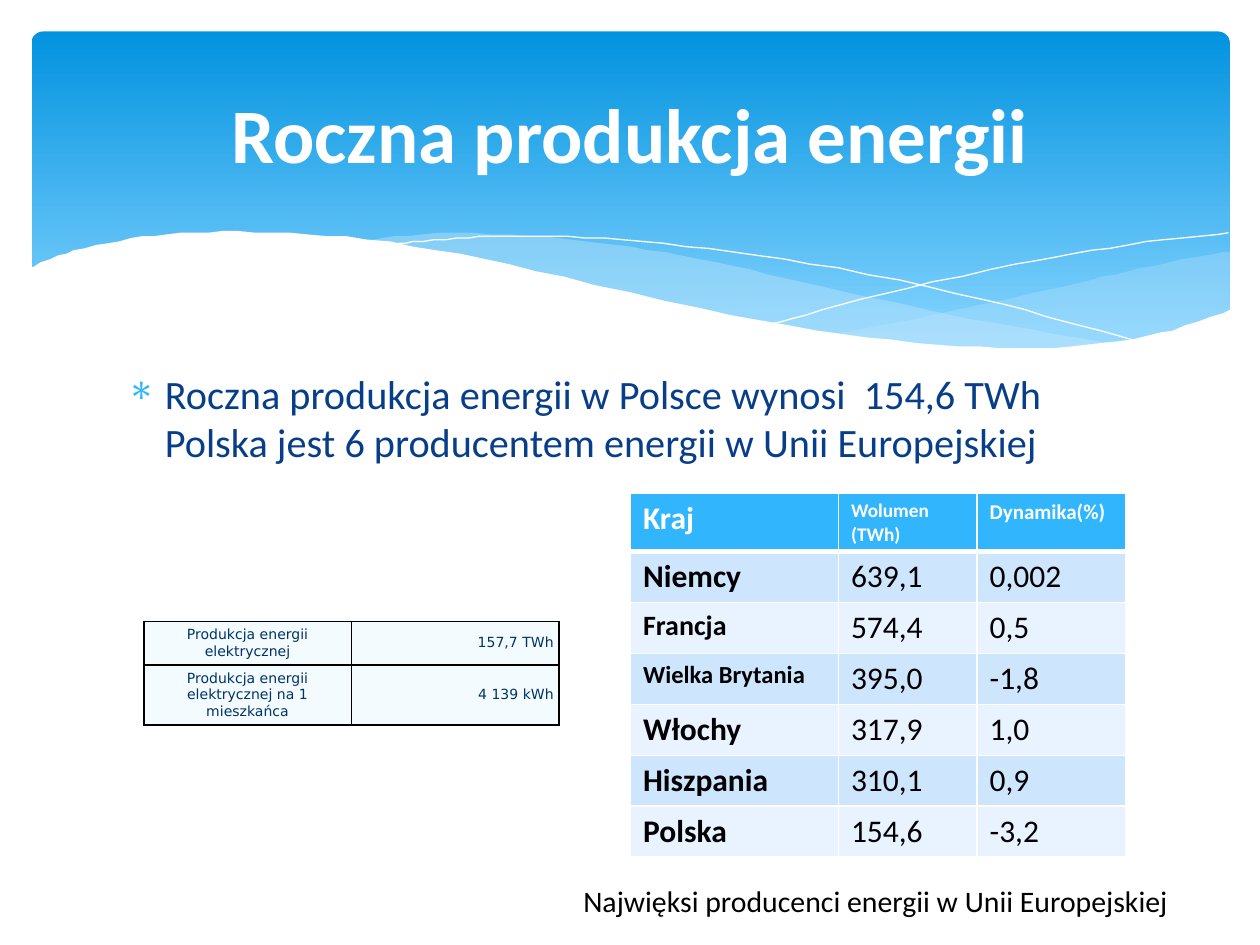
from lxml import etree
from pptx import Presentation
from pptx.dml.color import RGBColor
from pptx.enum import shapes, text
from pptx.oxml import ns
from pptx.util import Pt

WHITE = RGBColor(0xFF, 0xFF, 0xFF)
BLACK = RGBColor(0, 0, 0)
SKY_TOP = RGBColor(0x02, 0x93, 0xE0)
SKY_BOTTOM = RGBColor(0x83, 0xD3, 0xFE)
MIST = RGBColor(0xC6, 0xE7, 0xFC)
NAVY = RGBColor(0x07, 0x3E, 0x87)
ACCENT = RGBColor(0x31, 0xB6, 0xFD)
BANDS = [RGBColor(0xCE, 0xE5, 0xFE), RGBColor(0xE8, 0xF3, 0xFF)]
ICE = RGBColor(0xF3, 0xFB, 0xFE)
INK = RGBColor(0x00, 0x33, 0x66)

TITLE = "Roczna produkcja energii"
SUMMARY = ("Roczna produkcja energii w Polsce wynosi  154,6 TWh\v"
           "Polska jest 6 producentem energii w Unii Europejskiej")
CAPTION = "Najwięksi producenci energii w Unii Europejskiej"
POLAND = [("Produkcja energii elektrycznej", "157,7 TWh"),
          ("Produkcja energii elektrycznej na 1 mieszkańca", "4 139 kWh")]
HEADINGS = [("Kraj", 18), ("Wolumen (TWh)", 11), ("Dynamika(%)", 12)]
PRODUCERS = [("Niemcy", 18, "639,1", "0,002"), ("Francja", 16, "574,4", "0,5"),
             ("Wielka Brytania", 14, "395,0", "-1,8"), ("Włochy", 18, "317,9", "1,0"),
             ("Hiszpania", 18, "310,1", "0,9"), ("Polska", 18, "154,6", "-3,2")]

RIGHT_WAVE = [
    [(702.7, 144), (682.6, 146.9), (652.3, 153.4), (619.9, 160.6), (560.9, 174.2),
     (508.3, 185), (475.9, 190.8)],
    [(475.9, 190.8), (507.6, 195.1), (545, 198.7), (578.2, 200.2), (614.9, 198.7),
     (651.6, 193.7), (678.2, 186.5), (702.7, 177.8)]]
MIDDLE_WAVE = [
    [(643, 196.6), (602.6, 190.8), (533.5, 177.8), (452.9, 159.8), (409.7, 149.8),
     (370.1, 142.6), (334.8, 137.5), (302.4, 134.6), (259.9, 133.2), (225.4, 135.4),
     (205.9, 137.5)],
    [(205.9, 137.5), (246.2, 143.3), (290.9, 151.9), (323.3, 159.8), (381.6, 172.8),
     (432.7, 183.6), (478.8, 191.5), (519.8, 197.3), (556.6, 199.4), (589, 200.2),
     (617, 199.4), (643, 196.6)]]
FALLING_LINE = [
    [(222.5, 140.4), (236.2, 138.2), (261.4, 136.1), (288.7, 134.6), (324, 135.4),
     (367.2, 138.2), (419, 144), (478.8, 153.4), (547.2, 167.8), (598.3, 180.7),
     (653, 195.8)]]
RISING_LINE = [
    [(441.4, 185), (470.2, 177.1), (518.4, 164.9), (580.3, 151.2), (623.5, 143.3),
     (665.3, 136.8), (702, 133.2)]]
WHITE_WAVE = [
    [(703.4, 177.1), (676.8, 186.5), (647.3, 193.7), (612, 198), (571, 198.7),
     (522.7, 195.8), (466.6, 188.6), (399.6, 176.4), (321.8, 158.4), (262.8, 145.4),
     (210.2, 136.8), (165.6, 133.2), (127.4, 132.5), (95, 133.9), (68.4, 137.5),
     (42.5, 143.3), (25.9, 149), (16.6, 153.4)],
    [(16.6, 236.9), (703.4, 236.9)]]
WAVES = [(RIGHT_WAVE, MIST, 29), (MIDDLE_WAVE, MIST, 40), (FALLING_LINE, None, 0),
         (RISING_LINE, None, 0), (WHITE_WAVE, WHITE, 100)]

STEPS = 4


def smooth_curve(knots):
    if len(knots) < 3:
        return knots
    padded = [knots[0], *knots, knots[-1]]
    curve = []
    for a, b, c, d in zip(padded, padded[1:], padded[2:], padded[3:]):
        for step in range(STEPS):
            t = step / STEPS
            curve.append(tuple(
                (2 * q + (r - p) * t + (2 * p - 5 * q + 4 * r - s) * t ** 2
                 + (3 * q - p - 3 * r + s) * t ** 3) / 2
                for p, q, r, s in zip(a, b, c, d)))
    return curve + [knots[-1]]


def add_wave(slide, curves, color, opacity):
    outline = [point for knots in curves for point in smooth_curve(knots)]
    builder = slide.shapes.build_freeform(*outline[0], scale=Pt(1))
    builder.add_line_segments(outline[1:], close=color is not None)
    wave = builder.convert_to_shape()
    wave.shadow.inherit = False
    if color is None:
        wave.fill.background()
        wave.line.color.rgb = WHITE
        wave.line.width = Pt(0)
        return
    wave.fill.solid()
    wave.fill.fore_color.rgb = color
    wave.line.fill.background()
    tint = wave.fill._xPr.find(".//" + ns.qn("a:srgbClr"))
    etree.SubElement(tint, ns.qn("a:alpha"), val=str(opacity * 1000))


def write(frame, words, size, color, font="Calibri", bold=False, align=text.PP_ALIGN.LEFT):
    frame.word_wrap = True
    paragraph = frame.paragraphs[0]
    paragraph.text = words
    paragraph.alignment = align
    for run in paragraph.runs:
        for key, value in dict(size=Pt(size), name=font, bold=bold).items():
            setattr(run.font, key, value)
        run.font.color.rgb = color
    return paragraph


def add_words(slide, box, words, size, color, anchor=text.MSO_ANCHOR.TOP, **format_values):
    frame = slide.shapes.add_textbox(*map(Pt, box)).text_frame
    frame.vertical_anchor = anchor
    return write(frame, words, size, color, **format_values)


def add_grid(slide, left, top, widths, heights):
    holder = slide.shapes.add_table(len(heights), len(widths), Pt(left), Pt(top),
                                    Pt(sum(widths)), Pt(sum(heights)))
    grid = holder.table
    grid.first_row = grid.horz_banding = False
    for column, width in zip(grid.columns, widths):
        column.width = Pt(width)
    for row, height in zip(grid.rows, heights):
        row.height = Pt(height)
    return grid


def dress_cell(cell, fill, border, sides):
    properties = cell._tc.get_or_add_tcPr()
    for side, width in sides.items():
        edge = etree.SubElement(properties, ns.qn("a:ln" + side), w=str(Pt(width)))
        paint = etree.SubElement(edge, ns.qn("a:solidFill"))
        etree.SubElement(paint, ns.qn("a:srgbClr"), val=str(border))
    cell.fill.solid()
    cell.fill.fore_color.rgb = fill


def add_poland(slide):
    grid = add_grid(slide, 82.2, 355, [118.6] * 2, [24.5, 34.3])
    aligns = [text.PP_ALIGN.CENTER, text.PP_ALIGN.RIGHT]
    for r, record in enumerate(POLAND):
        for c, words in enumerate(record):
            cell = grid.cell(r, c)
            dress_cell(cell, ICE, BLACK, dict.fromkeys("LRTB", 1))
            for side in ("left", "right", "top", "bottom"):
                setattr(cell, "margin_" + side, Pt(2.88))
            cell.vertical_anchor = text.MSO_ANCHOR.MIDDLE
            write(cell.text_frame, words, 8, INK, "DejaVu Sans", align=aligns[c])


def add_producers(slide):
    grid = add_grid(slide, 360.3, 281.6, [118.8, 79.2, 85], [33.6] + [29.1] * len(PRODUCERS))
    records = [HEADINGS] + [[(country, size), (volume, 18), (change, 18)]
                            for country, size, volume, change in PRODUCERS]
    for r, record in enumerate(records):
        heading = r == 0
        sides = dict(L=1, R=1, T=1, B=3) if heading else dict(L=1, R=1, B=1)
        for c, (words, size) in enumerate(record):
            cell = grid.cell(r, c)
            dress_cell(cell, ACCENT if heading else BANDS[(r - 1) % 2], WHITE, sides)
            write(cell.text_frame, words, size, WHITE if heading else BLACK,
                  bold=heading or c == 0)


def main():
    deck = Presentation()
    deck.slide_width, deck.slide_height = Pt(720), Pt(540)
    slide = deck.slides.add_slide(deck.slide_layouts[6])

    sky = slide.shapes.add_shape(shapes.MSO_SHAPE.ROUNDED_RECTANGLE,
                                 Pt(18), Pt(18), Pt(684.7), Pt(194.4))
    sky.adjustments[0] = 0.034
    sky.shadow.inherit = False
    sky.line.fill.background()
    sky.fill.gradient()
    sky.fill.gradient_angle = 270
    for stop, color, position in zip(sky.fill.gradient_stops, (SKY_TOP, SKY_BOTTOM), (0, 0.9)):
        stop.color.rgb = color
        stop.position = position
    for wave in WAVES:
        add_wave(slide, *wave)

    summary = add_words(slide, (65.5, 207.4, 583.2, 271.4), SUMMARY, 23, NAVY)
    indents = summary._p.get_or_add_pPr()
    indents.set("marL", str(Pt(21.6)))
    indents.set("indent", str(Pt(-21.6)))
    bullet_color = etree.SubElement(indents, ns.qn("a:buClr"))
    etree.SubElement(bullet_color, ns.qn("a:srgbClr"), val=str(ACCENT))
    etree.SubElement(indents, ns.qn("a:buChar"), char="∗")

    add_words(slide, (36, 26.6, 648, 98.6), TITLE, 44, WHITE, text.MSO_ANCHOR.MIDDLE,
              bold=True, align=text.PP_ALIGN.CENTER)
    add_poland(slide)
    add_producers(slide)
    add_words(slide, (326.2, 501.1, 385.2, 28.1), CAPTION, 17, BLACK)
    deck.save("out.pptx")


if __name__ == "__main__":
    main()
